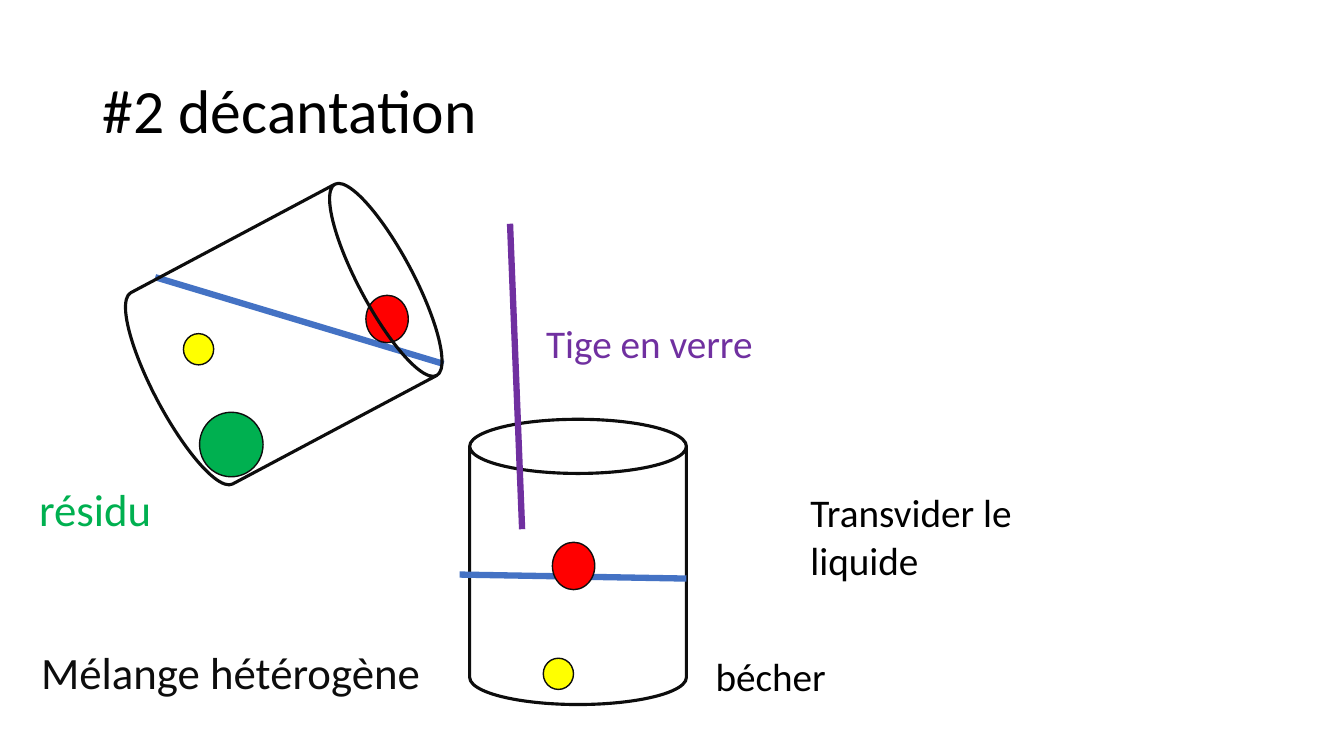
from dataclasses import dataclass

from lxml import etree
from pptx import Presentation
from pptx.dml.color import RGBColor
from pptx.enum.shapes import MSO_CONNECTOR, MSO_SHAPE
from pptx.enum.text import MSO_ANCHOR, MSO_AUTO_SIZE, PP_ALIGN
from pptx.oxml.ns import qn
from pptx.util import Inches, Pt

CAN, ELLIPSE = MSO_SHAPE.CAN, MSO_SHAPE.OVAL
STRAIGHT = MSO_CONNECTOR.STRAIGHT
FIT_SHAPE, NO_FIT = MSO_AUTO_SIZE.SHAPE_TO_FIT_TEXT, MSO_AUTO_SIZE.NONE
MIDDLE, LEFT = MSO_ANCHOR.MIDDLE, PP_ALIGN.LEFT

BLACK = RGBColor(0x00, 0x00, 0x00)
OUTLINE = RGBColor(0x0D, 0x0D, 0x0D)
RED = RGBColor(0xFF, 0x00, 0x00)
YELLOW = RGBColor(0xFF, 0xFF, 0x00)
GREEN = RGBColor(0x00, 0xB0, 0x50)
BLUE = RGBColor(0x44, 0x72, 0xC4)
PURPLE = RGBColor(0x70, 0x30, 0xA0)

FONT = "Calibri"
SLIDE_WIDTH, SLIDE_HEIGHT = Inches(13.33), Inches(7.5)
COLUMNS, ROWS = 40, 30
TITLE_ONLY = 5


@dataclass(frozen=True)
class Stroke:
    start: tuple[float, float]
    end: tuple[float, float]
    color: RGBColor


@dataclass(frozen=True)
class Kind:
    """Look shared by all vessels, or by all grains of one substance."""
    outline: MSO_SHAPE
    width: float
    height: float
    line_width: float
    fill: RGBColor | None = None


@dataclass(frozen=True)
class Item:
    kind: Kind
    column: float
    row: float
    rotation: float = 0


@dataclass(frozen=True)
class Label:
    text: str
    column: float
    row: float
    width: float
    height: float
    size: int
    color: RGBColor


VESSEL = Kind(CAN, 6.45, 11.32, 2.25)
RED_GRAIN = Kind(ELLIPSE, 1.26, 1.88, 1, RED)
YELLOW_GRAIN = Kind(ELLIPSE, 0.9, 1.24, 1, YELLOW)
RESIDUE = Kind(ELLIPSE, 1.89, 2.56, 1, GREEN)

# Back to front
APPARATUS: list[Stroke | Item] = [
    Stroke((4.62, 11), (13.2, 14.44), BLUE),
    Item(RED_GRAIN, 10.89, 11.72),
    Item(VESSEL, 5.22, 7.6, rotation=62),
    Item(RESIDUE, 5.94, 16.36),
    Item(YELLOW_GRAIN, 5.46, 13.24),
    Item(VESSEL, 13.98, 16.64),
    Stroke((13.68, 22.8), (20.43, 22.96), BLUE),
    Item(RED_GRAIN, 16.44, 21.52),
    Item(YELLOW_GRAIN, 16.17, 26.12),
    Stroke((15.54, 21), (15.18, 8.88), PURPLE),
]
LABELS = [
    Label("Transvider le liquide", 23.82, 19.2, 8.64, 4.16, 28, BLACK),
    Label("Tige en verre", 15.96, 12.48, 8.64, 2.28, 28, PURPLE),
    Label("résidu", 0.87, 18.92, 4.17, 2.56, 32, GREEN),
    Label("Mélange hétérogène", 0.93, 25.4, 11.97, 2.56, 32, OUTLINE),
    Label("bécher", 21, 25.68, 8.64, 2.28, 28, BLACK),
]


def columns(count: float) -> int:
    return round(SLIDE_WIDTH * count / COLUMNS)


def rows(count: float) -> int:
    return round(SLIDE_HEIGHT * count / ROWS)


def set_font(para, size: int, color: RGBColor) -> None:
    para.font.name = FONT
    para.font.size = Pt(size)
    para.font.color.rgb = color


def write_title(page, text: str) -> None:
    title = page.shapes.title
    title.left, title.top = columns(2.76), rows(1.6)
    title.width, title.height = columns(34.5), rows(5.8)
    frame = title.text_frame
    frame.text = text
    frame.auto_size = NO_FIT
    frame.vertical_anchor = MIDDLE
    para = frame.paragraphs[0]
    para.alignment = LEFT
    para.line_spacing = 0.9
    set_font(para, 44, BLACK)


def draw_stroke(page, stroke: Stroke) -> None:
    (x1, y1), (x2, y2) = stroke.start, stroke.end
    line = page.shapes.add_connector(
        STRAIGHT, columns(x1), rows(y1), columns(x2), rows(y2))
    line.line.color.rgb = stroke.color
    line.line.width = Pt(4.5)
    etree.SubElement(line._element.spPr, qn("a:effectLst"))


def draw_item(page, item: Item) -> None:
    kind = item.kind
    shape = page.shapes.add_shape(
        kind.outline, columns(item.column), rows(item.row),
        columns(kind.width), rows(kind.height))
    shape.rotation = item.rotation
    shape.shadow.inherit = False
    if kind.fill is None:
        shape.fill.background()
    else:
        shape.fill.solid()
        shape.fill.fore_color.rgb = kind.fill
    shape.line.color.rgb = OUTLINE
    shape.line.width = Pt(kind.line_width)


def write_label(page, label: Label) -> None:
    box = page.shapes.add_textbox(
        columns(label.column), rows(label.row),
        columns(label.width), rows(label.height))
    frame = box.text_frame
    frame.text = label.text
    frame.word_wrap = True
    frame.auto_size = FIT_SHAPE
    set_font(frame.paragraphs[0], label.size, label.color)


def main() -> None:
    deck = Presentation()
    deck.slide_width, deck.slide_height = SLIDE_WIDTH, SLIDE_HEIGHT
    page = deck.slides.add_slide(deck.slide_layouts[TITLE_ONLY])
    write_title(page, "#2 décantation")
    for part in APPARATUS:
        if isinstance(part, Stroke):
            draw_stroke(page, part)
        else:
            draw_item(page, part)
    for label in LABELS:
        write_label(page, label)
    deck.save("out.pptx")


if __name__ == "__main__":
    main()
